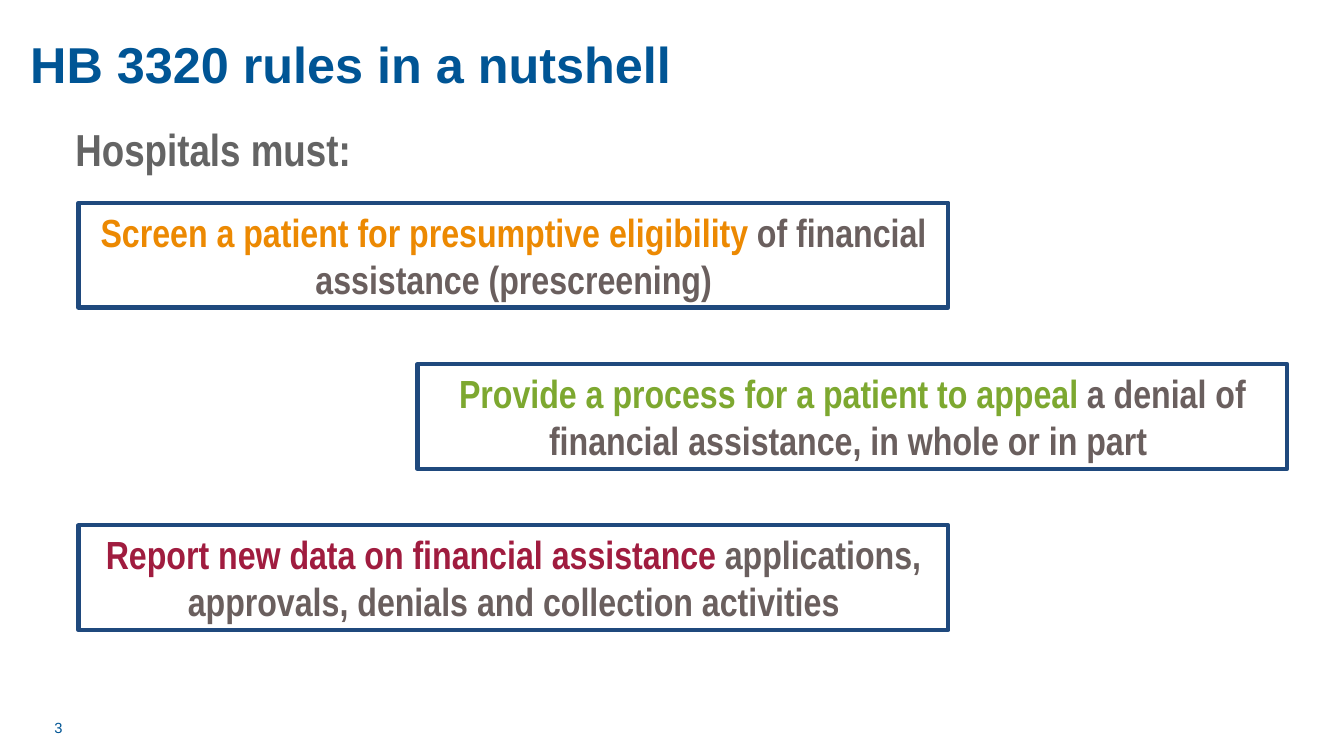
from dataclasses import dataclass

from pptx import Presentation
from pptx.dml.color import RGBColor
from pptx.enum.shapes import MSO_SHAPE
from pptx.enum.text import MSO_ANCHOR, MSO_AUTO_SIZE, PP_ALIGN
from pptx.util import Cm, Pt

RECTANGLE = MSO_SHAPE.RECTANGLE
TOP, MIDDLE = MSO_ANCHOR.TOP, MSO_ANCHOR.MIDDLE
LEFT, CENTER = PP_ALIGN.LEFT, PP_ALIGN.CENTER
FIT_SHAPE, NO_FIT = MSO_AUTO_SIZE.SHAPE_TO_FIT_TEXT, MSO_AUTO_SIZE.NONE


@dataclass(frozen=True)
class Theme:
    heading_font: str = "Arial"
    body_font: str = "Arial Narrow"
    blue: str = "005595"
    border: str = "1F497D"
    white: str = "FFFFFF"
    gray: str = "646464"
    body: str = "6A5F5E"
    orange: str = "EC8902"
    green: str = "7DA830"
    red: str = "A01C3F"
    title_size: float = 36
    lead_size: float = 32
    rule_size: float = 28
    number_size: float = 10.5
    border_width: float = 3


THEME = Theme()

RULES = [
    ("Screen a patient for presumptive eligibility ",
     "of financial assistance (prescreening)", THEME.orange),
    ("Provide a process for a patient to appeal ",
     "a denial of financial assistance, in whole or in part ", THEME.green),
    ("Report new data on financial assistance ",
     "applications, approvals, denials and collection activities", THEME.red),
]


def write_text(shape, runs, *, font, size, bold=True, align=LEFT, anchor=MIDDLE,
               wrap=True, fit=NO_FIT, line_spacing=None, spacing=0):
    """Write (text, colour) runs as one paragraph."""
    frame = shape.text_frame
    frame.word_wrap = wrap
    frame.auto_size = fit
    frame.vertical_anchor = anchor
    paragraph = frame.paragraphs[0]
    paragraph.alignment = align
    paragraph.line_spacing = line_spacing
    paragraph.space_before = paragraph.space_after = Pt(spacing)
    for text, color in runs:
        run = paragraph.add_run()
        run.text = text
        run.font.name = font
        run.font.size = Pt(size)
        run.font.bold = bold
        run.font.color.rgb = RGBColor.from_string(color)


def add_label(slide, box, text, color, **text_format):
    shape = slide.shapes.add_textbox(*(Cm(length) for length in box))
    write_text(shape, [(text, color)], **text_format)


def add_rule(slide, box, highlight, remainder, color):
    shape = slide.shapes.add_shape(RECTANGLE, *(Cm(length) for length in box))
    shape.shadow.inherit = False
    shape.fill.solid()
    shape.fill.fore_color.rgb = RGBColor.from_string(THEME.white)
    shape.line.color.rgb = RGBColor.from_string(THEME.border)
    shape.line.width = Pt(THEME.border_width)
    write_text(shape, [(highlight, color), (remainder, THEME.body)],
               font=THEME.body_font, size=THEME.rule_size,
               align=CENTER, fit=FIT_SHAPE, spacing=6)


def add_rules(slide, box):
    """Spread the rules down the box, alternating between its left and right edge."""
    left, top, width, height = box
    rule_width, rule_height = 21.92, 2.64
    pitch = (height - rule_height) / (len(RULES) - 1)
    for index, rule in enumerate(RULES):
        indent = (index % 2) * (width - rule_width)
        add_rule(slide, (left + indent, top + index * pitch, rule_width, rule_height), *rule)


def main():
    presentation = Presentation()
    presentation.slide_width = Cm(33.87)
    presentation.slide_height = Cm(19.05)
    slide = presentation.slides.add_slide(presentation.slide_layouts[6])

    add_label(slide, (1.12, 17.98, 7.9, 0.69), "3", THEME.blue,
              font=THEME.heading_font, size=THEME.number_size, bold=False)
    add_label(slide, (0.51, 0.23, 30.48, 2.92), "HB 3320 rules in a nutshell", THEME.blue,
              font=THEME.heading_font, size=THEME.title_size, line_spacing=0.9)
    add_rules(slide, (1.98, 5.11, 30.46, 10.77))
    add_label(slide, (1.65, 2.95, 7.77, 1.63), "Hospitals must:", THEME.gray,
              font=THEME.body_font, size=THEME.lead_size,
              anchor=TOP, wrap=False, fit=FIT_SHAPE)

    presentation.save("out.pptx")


if __name__ == "__main__":
    main()
